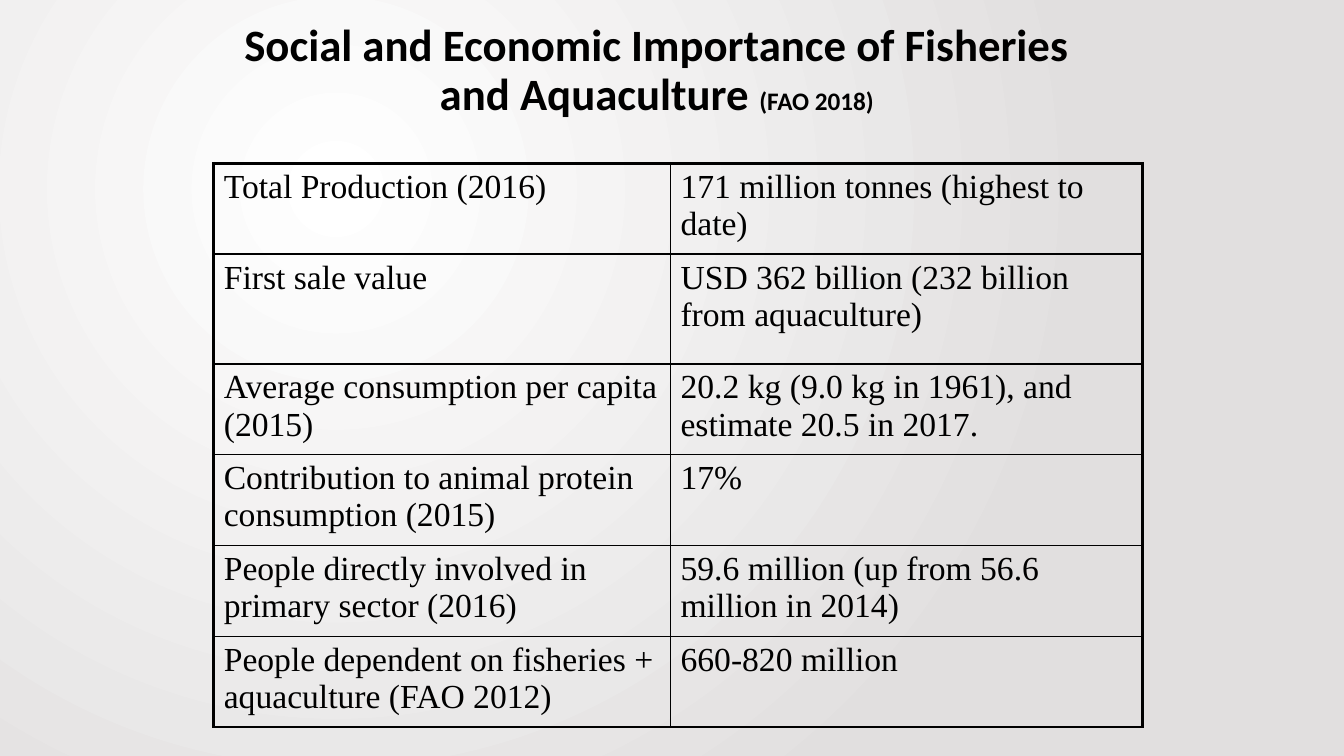
from lxml import etree
from pptx import Presentation
from pptx.dml.color import RGBColor
from pptx.enum import text
from pptx.oxml import ns
from pptx.util import Inches, Pt

COLORS = {"ink": "000000", "center": "FFFFFF", "edge": "E1DFDF"}
TITLE = [("Social and Economic Importance of Fisheries and Aquaculture ", 32),
         ("(FAO 2018)", 18)]
FACTS = [
    ("Total Production (2016)", "171 million tonnes (highest to date)"),
    ("First sale value", "USD 362 billion (232 billion from aquaculture)"),
    ("Average consumption per capita (2015)",
     "20.2 kg (9.0 kg in 1961), and estimate 20.5 in 2017."),
    ("Contribution to animal protein consumption (2015)", "17%"),
    ("People directly involved in primary sector (2016)",
     "59.6 million (up from 56.6 million in 2014)"),
    ("People dependent on fisheries + aquaculture (FAO 2012)", "660-820 million"),
]
COLUMN_WIDTHS = [4.53, 4.68]
ROW_HEIGHTS = [0.75, 1.09, 0.75, 0.75, 0.75, 0.75]
THIN, THICK = 1, 2.25


def add_child(parent, tag, **attrs):
    return etree.SubElement(parent, ns.qn(tag), attrs)


def add_run(p, words, size, font, bold=False):
    r = p.add_run()
    r.text = words
    r.font.size = Pt(size)
    r.font.name = font
    r.font.bold = bold
    r.font.color.rgb = RGBColor.from_string(COLORS["ink"])


def paint_background(s):
    """Fill the slide with a circular gradient centred in the upper left."""
    fill = s.background.fill
    fill.gradient()
    for stop, name in zip(fill.gradient_stops, ("center", "edge")):
        stop.color.rgb = RGBColor.from_string(COLORS[name])
    linear = s.background._cSld.find(".//" + ns.qn("a:lin"))
    gradient = linear.getparent()
    gradient.remove(linear)
    circle = add_child(gradient, "a:path", path="circle")
    add_child(circle, "a:fillToRect", l="50000", t="50000", r="100000", b="100000")


def add_title(s, left, top, width, height):
    sp = s.shapes.add_textbox(Inches(left), Inches(top), Inches(width), Inches(height))
    tf = sp.text_frame
    tf.word_wrap = True
    tf.vertical_anchor = text.MSO_ANCHOR.MIDDLE
    p = tf.paragraphs[0]
    p.alignment = text.PP_ALIGN.CENTER
    p.line_spacing = 0.9
    for words, size in TITLE:
        add_run(p, words, size, "Calibri", bold=True)


def set_borders(cell, **widths):
    """Draw cell borders; the keys L, R, T and B give widths in points."""
    properties = cell._tc.get_or_add_tcPr()
    for index, (side, width) in enumerate(widths.items()):
        line = etree.Element(ns.qn(f"a:ln{side}"), w=str(Pt(width)))
        add_child(add_child(line, "a:solidFill"), "a:srgbClr", val=COLORS["ink"])
        properties.insert(index, line)


def add_facts_table(s, left, top):
    rows, cols = len(FACTS), len(COLUMN_WIDTHS)
    table = s.shapes.add_table(
        rows, cols, Inches(left), Inches(top),
        Inches(sum(COLUMN_WIDTHS)), Inches(sum(ROW_HEIGHTS))).table
    table.first_row = table.horz_banding = False
    for column, width in zip(table.columns, COLUMN_WIDTHS):
        column.width = Inches(width)
    for i, (fact, height) in enumerate(zip(FACTS, ROW_HEIGHTS)):
        table.rows[i].height = Inches(height)
        for j, words in enumerate(fact):
            cell = table.cell(i, j)
            cell.fill.background()
            p = cell.text_frame.paragraphs[0]
            before = add_child(p._p.get_or_add_pPr(), "a:spcBef")
            add_child(before, "a:spcPct", val="20000")
            add_run(p, words, 24, "Times New Roman")
            set_borders(cell,
                        L=THICK if j == 0 else THIN,
                        R=THICK if j == cols - 1 else THIN,
                        T=THICK if i == 0 else THIN,
                        B=THIN)


def main():
    prs = Presentation()
    prs.slide_width, prs.slide_height = Inches(13.33), Inches(7.5)
    s = prs.slides.add_slide(prs.slide_layouts[6])
    paint_background(s)
    add_title(s, 2.1, 0.21, 8.83, 1)
    add_facts_table(s, 2.12, 1.62)
    prs.save("out.pptx")


if __name__ == "__main__":
    main()
